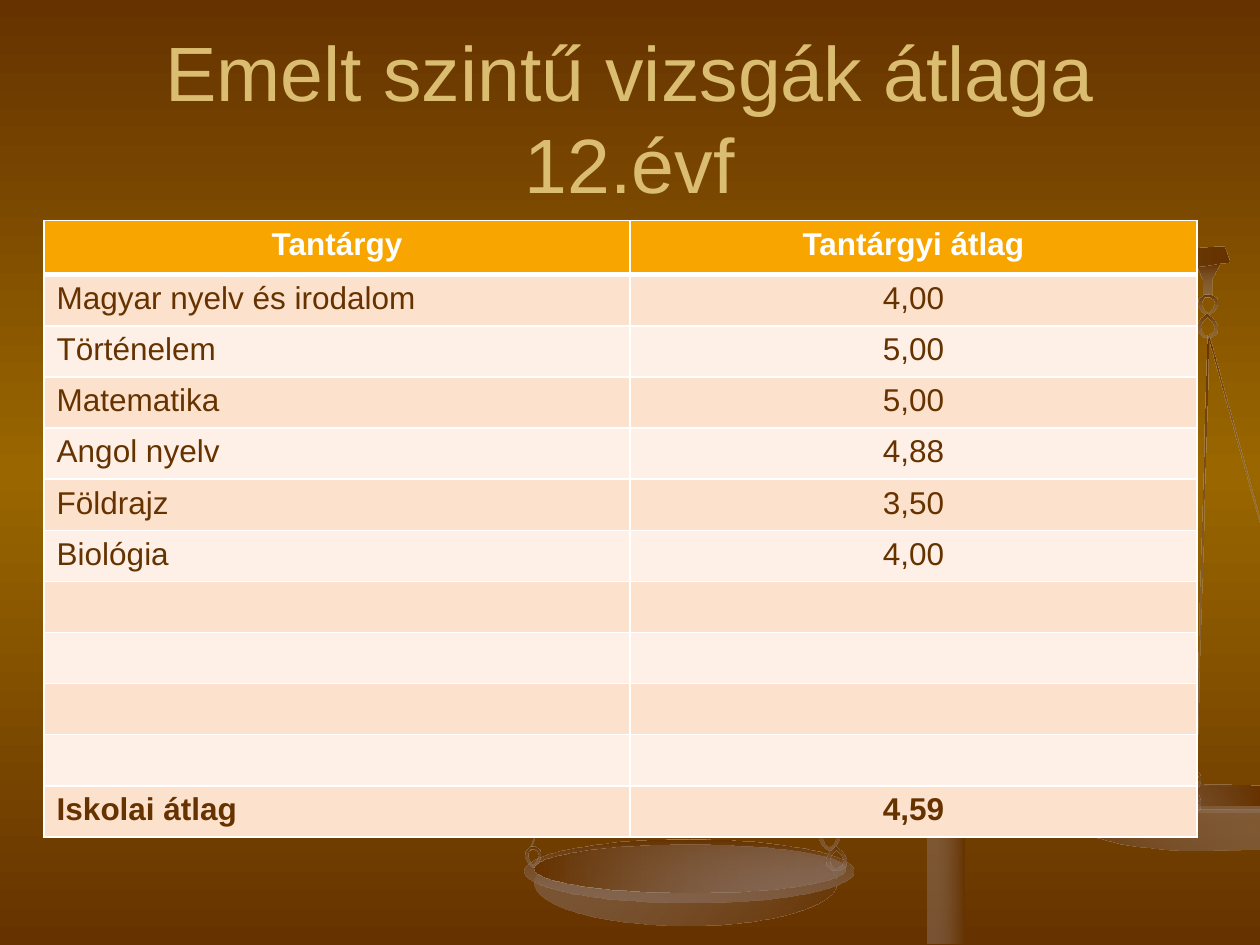
from pptx import Presentation
from pptx.dml.color import RGBColor
from pptx.enum.shapes import MSO_SHAPE
from pptx.enum.text import MSO_ANCHOR, PP_ALIGN
from pptx.oxml.ns import qn
from pptx.util import Cm, Pt
from lxml.etree import Element, SubElement

BROWN, GOLD, MIST = "663300", "996600", "937F79"
DARK, LIGHT = (BROWN, 100), (MIST, 40)
FADE, GLOW = (DARK, LIGHT), (LIGHT, DARK)
ROWS = [
    ("Tantárgy", "Tantárgyi átlag"),
    ("Magyar nyelv és irodalom", "4,00"),
    ("Történelem", "5,00"),
    ("Matematika", "5,00"),
    ("Angol nyelv", "4,88"),
    ("Földrajz", "3,50"),
    ("Biológia", "4,00"),
    *[("", "")] * 4,
    ("Iskolai átlag", "4,59"),
]

# Outlines, in percent of their box
BEAM = [(99, 0), (100, 16), (0, 100), (0, 88), (47, 21), (52, 17)]
HOOK = [(100, 0), (0, 4), (28, 48), (28, 100), (67, 100), (67, 44)]
RIM = [(100, 14), (76, 5), (33, 0), (11, 5), (2, 14), (0, 23), (3, 45),
       (14, 68), (39, 86), (62, 95), (100, 100)]
BOWL = [(0, 0), (2, 21), (7, 38), (20, 70), (36, 86), (49, 93), (65, 98),
        (75, 98), (100, 95), (100, 23), (51, 21), (15, 9)]
WELL = [(100, 6), (73, 0), (17, 0), (3, 19), (0, 31), (5, 50), (17, 69),
        (47, 94), (73, 100), (100, 100)]
LINK = [(50, 100), (82, 75), (100, 45), (95, 18), (60, 0), (30, 3), (5, 25),
        (2, 50), (18, 78)]
HOLE = [(50, 86), (75, 65), (85, 42), (80, 24), (55, 12), (35, 14), (20, 30),
        (18, 48), (30, 70)]


def color(text):
    return RGBColor.from_string(text)


def blend(fill, root, stops, angle):
    """Fill with a linear gradient; stops are (colour, opacity in percent)."""
    fill.background()
    blank = next(root.iter(qn("a:noFill")))
    grad = Element(qn("a:gradFill"), rotWithShape="1")
    group = SubElement(grad, qn("a:gsLst"))
    for i, (tint, alpha) in enumerate(stops):
        stop = SubElement(group, qn("a:gs"), pos=str(100000 * i // (len(stops) - 1)))
        rgb = SubElement(stop, qn("a:srgbClr"), val=tint)
        if alpha < 100:
            SubElement(rgb, qn("a:alpha"), val=str(alpha * 1000))
    SubElement(grad, qn("a:lin"), ang=str(angle * 60000), scaled="0")
    blank.getparent().replace(blank, grad)


def finish(shape, stops, angle):
    blend(shape.fill, shape._element, stops, angle)
    shape.line.fill.background()
    shape.shadow.inherit = False


def preset(slide, kind, box, stops, angle, turn=0):
    shape = slide.shapes.add_shape(kind, *map(Cm, box))
    shape.rotation = turn
    finish(shape, stops, angle)


def outline(slide, box, rings, stops, angle):
    x, y, w, h = map(Cm, box)
    rings = [[(x + w * px / 100, y + h * py / 100) for px, py in ring]
             for ring in rings]
    pen = slide.shapes.build_freeform(*rings[0][0])
    for i, ring in enumerate(rings):
        if i:
            pen.move_to(*ring[0])
        pen.add_line_segments(ring[1:], close=True)
    finish(pen.convert_to_shape(), stops, angle)


def scales(slide, left, top):
    def at(x, y, w, h):
        return left + x, top + y, w, h

    for x, y, size, turn in [(13.64, 1.78, 8.81, 1.5), (14.3, 1.73, 3.89, 344.6),
                             (1.6, 3.05, 9.35, 18.6)]:
        preset(slide, MSO_SHAPE.RECTANGLE, at(x, y, 0.03, size), FADE, 90, turn)
    for box, ring, stops, angle in [
        ((10.44, 10.84, 4.39, 0.56), RIM, FADE, 90),
        ((10.54, 11.1, 4.29, 1.09), BOWL, FADE, 315),
        ((10.61, 10.84, 4.22, 0.41), WELL, GLOW, 0),
        ((13.56, 0.33, 0.46, 0.69), HOOK, FADE, 90),
        ((2.74, 0, 11.48, 1.96), BEAM, GLOW, 0),
    ]:
        outline(slide, at(*box), [ring], stops, angle)
    for box, stops, angle in [
        ((0.2, 11.94, 6.1, 1.73), GLOW, 45),
        ((0, 11.94, 6.63, 1.27), FADE, 90),
        ((0.2, 12.04, 6.27, 0.97), FADE, 0),
    ]:
        preset(slide, MSO_SHAPE.OVAL, at(*box), stops, angle)
    for box, up in [
        ((13.59, 0.96, 0.38, 0.43), False), ((13.56, 1.34, 0.41, 0.48), True),
        ((13.36, 10.56, 0.28, 0.43), False), ((13.33, 10.92, 0.3, 0.48), True),
        ((5.94, 11.73, 0.41, 0.43), False), ((6.09, 12.09, 0.41, 0.48), True),
        ((0.02, 12.09, 0.3, 0.41), False),
    ]:
        rings = [[(x, 100 - y if up else y) for x, y in ring]
                 for ring in (LINK, HOLE[::-1])]
        outline(slide, at(*box), rings, FADE, 90)
    preset(slide, MSO_SHAPE.RECTANGLE, at(8.12, 2.84, 0.76, 11.2), GLOW, 0)


def style(para, size, tint, align, bold=False):
    para.alignment = align
    font = para.font
    font.name, font.size, font.bold = "Arial", Pt(size), bold
    font.color.rgb = color(tint)


def title(slide, box):
    frame = slide.shapes.add_textbox(*map(Cm, box)).text_frame
    frame.word_wrap = True
    frame.vertical_anchor = MSO_ANCHOR.MIDDLE
    para = frame.paragraphs[0]
    para.text = "Emelt szintű vizsgák átlaga 12.évf"
    style(para, 44, "DBBD71", PP_ALIGN.CENTER)


def border(cell, head, below):
    """Rule a cell in white, thicker between the head row and the next."""
    props = cell._tc.get_or_add_tcPr()
    widths = {"lnL": 1, "lnR": 1, "lnT": 3 if below else 1, "lnB": 3 if head else 1}
    for i, (side, width) in enumerate(widths.items()):
        line = Element(qn("a:" + side), w=str(Pt(width)))
        solid = SubElement(line, qn("a:solidFill"))
        SubElement(solid, qn("a:srgbClr"), val="FFFFFF")
        props.insert(i, line)


def marks(slide, left, top, width, height):
    table = slide.shapes.add_table(len(ROWS), 2, *map(Cm, (left, top, width, height))).table
    first = 11.81
    table.columns[0].width = Cm(first)
    table.columns[1].width = Cm(width - first)
    tall = 1.09
    for r, row in enumerate(ROWS):
        head, last = r == 0, r == len(ROWS) - 1
        table.rows[r].height = Cm(tall if head else (height - tall) / (len(ROWS) - 1))
        for c, text in enumerate(row):
            cell = table.cell(r, c)
            cell.fill.solid()
            cell.fill.fore_color.rgb = color(
                "F8A500" if head else "FCE1CC" if r % 2 else "FEF0E7")
            border(cell, head, r == 1)
            para = cell.text_frame.paragraphs[0]
            para.text = text
            style(para, 18, "FFFFFF" if head else BROWN,
                  PP_ALIGN.CENTER if head or c else PP_ALIGN.LEFT, head or last)


def main():
    deck = Presentation()
    deck.slide_width, deck.slide_height = Cm(25.4), Cm(19.05)
    slide = deck.slides.add_slide(deck.slide_layouts[6])
    blend(slide.background.fill, slide._element, (DARK, (GOLD, 100), DARK), 90)
    scales(slide, 10.57, 4.98)
    title(slide, (1.27, 0.76, 22.86, 3.18))
    marks(slide, 0.89, 4.45, 23.24, 12.42)
    deck.save("out.pptx")


if __name__ == "__main__":
    main()
